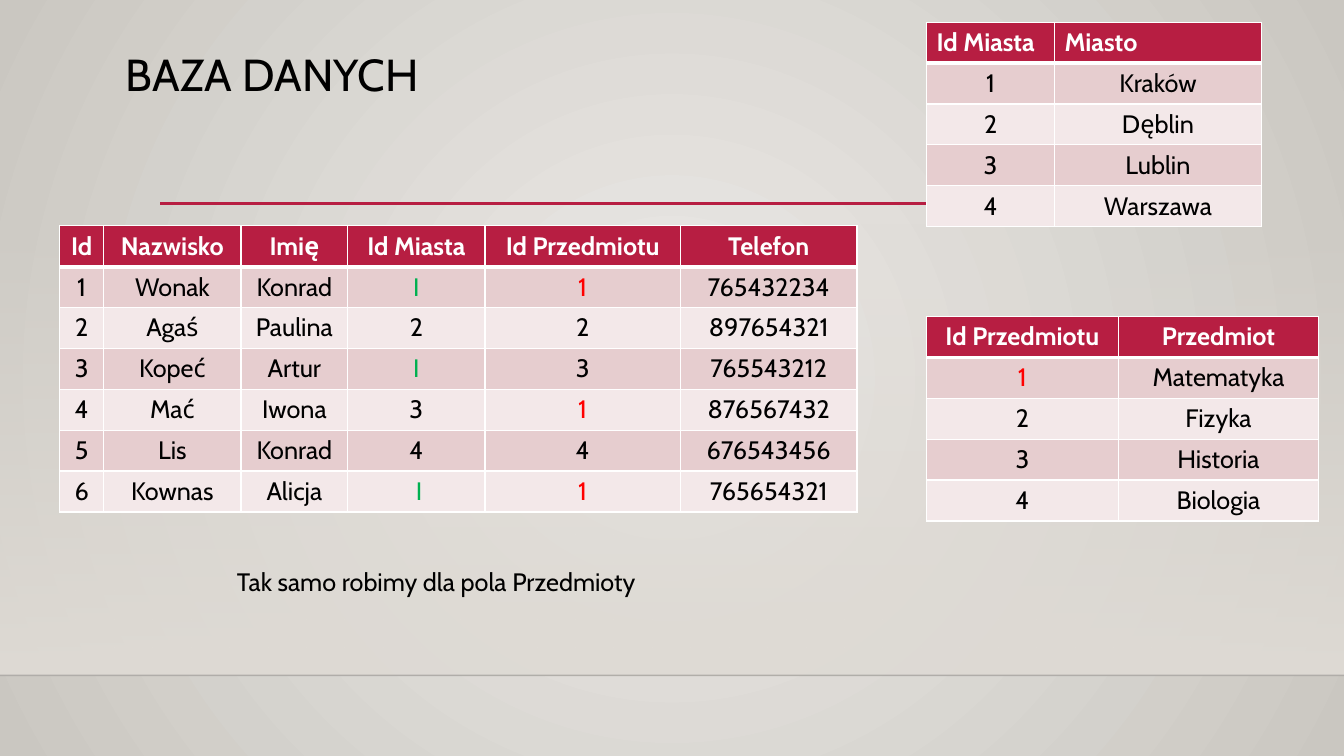
from dataclasses import dataclass

from lxml.etree import SubElement
from pptx import Presentation
from pptx.dml.color import RGBColor
from pptx.enum.shapes import MSO_CONNECTOR, MSO_SHAPE
from pptx.enum.text import MSO_ANCHOR, MSO_AUTO_SIZE, PP_ALIGN
from pptx.oxml.ns import qn
from pptx.util import Inches, Pt

BLACK = RGBColor(0x00, 0x00, 0x00)
SHELF = RGBColor(0x00, 0x00, 0x01)
WHITE = RGBColor(0xFF, 0xFF, 0xFF)
CRIMSON = RGBColor(0xB7, 0x1E, 0x42)
ROSE = RGBColor(0xE6, 0xCD, 0xCF)
PALE_ROSE = RGBColor(0xF3, 0xE8, 0xE9)
GREEN = RGBColor(0x00, 0xB0, 0x50)
RED = RGBColor(0xFF, 0x00, 0x00)
SAND = RGBColor(0xDF, 0xDB, 0xD5)
GLOW = RGBColor(0xEC, 0xEA, 0xE7)
EDGE = RGBColor(0xCA, 0xC7, 0xC1)

BODY = {"name": "Cabin", "size": Pt(18), "bold": False}
HEADER = BODY | {"bold": True}
TITLE = BODY | {"size": Pt(32)}


@dataclass
class DataTable:
    left: float
    top: float
    height: float
    widths: list[float]
    rows: list[list[str]]
    header_align: PP_ALIGN = PP_ALIGN.CENTER


@dataclass
class Rule:
    start: float
    end: float
    top: float
    color: RGBColor
    width: float
    opacity: int = 100


@dataclass
class Label:
    text: str
    left: float
    top: float
    width: float
    height: float
    style: dict
    spacing: float
    fit: MSO_AUTO_SIZE


TABLES = [
    DataTable(0.59, 2.24, 2.84, [0.44, 1.36, 1.06, 1.36, 1.94, 1.75], [
        ["Id", "Nazwisko", "Imię", "Id Miasta", "Id Przedmiotu", "Telefon"],
        ["1", "Wonak", "Konrad", "I", "1", "765432234"],
        ["2", "Agaś", "Paulina", "2", "2", "897654321"],
        ["3", "Kopeć", "Artur", "I", "3", "765543212"],
        ["4", "Mać", "Iwona", "3", "1", "876567432"],
        ["5", "Lis", "Konrad", "4", "4", "676543456"],
        ["6", "Kownas", "Alicja", " I", "1", "765654321"],
    ]),
    DataTable(9.19, 3.14, 2.02, [1.9, 1.99], [
        ["Id Przedmiotu", "Przedmiot"],
        ["1", "Matematyka"],
        ["2", "Fizyka"],
        ["3", "Historia"],
        ["4", "Biologia"],
    ]),
    DataTable(9.19, 0.22, 2.02, [1.27, 2.05], [
        ["Id Miasta", "Miasto"],
        ["1", "Kraków"],
        ["2", "Dęblin"],
        ["3", "Lublin"],
        ["4", "Warszawa"],
    ], PP_ALIGN.LEFT),
]
RULES = [
    Rule(0, 13.33, 6.7, SHELF, 1, 20),
    Rule(1.59, 12.1, 2.02, CRIMSON, 2.5),
]
LABELS = [
    Label("Tak samo robimy dla pola Przedmioty", 2.25, 5.57, 8.89, 0.4,
          BODY, 1.0, MSO_AUTO_SIZE.SHAPE_TO_FIT_TEXT),
    Label("BAZA DANYCH", 1.15, 0.47, 10.5, 1.15, TITLE, 0.9, MSO_AUTO_SIZE.NONE),
]


def write(para, text: str, style: dict, color: RGBColor) -> None:
    span = para.add_run()
    span.text = text
    for name, value in style.items():
        setattr(span.font, name, value)
    span.font.color.rgb = color


def set_opacity(element, percent: int) -> None:
    color = element.find(".//" + qn("a:srgbClr"))
    SubElement(color, qn("a:alpha"), val=str(percent * 1000))


def add_border(cell, side: str, width: float) -> None:
    properties = cell._tc.get_or_add_tcPr()
    line = SubElement(properties, qn("a:ln" + side), w=str(Pt(width)))
    fill = SubElement(line, qn("a:solidFill"))
    SubElement(fill, qn("a:srgbClr"), val=str(WHITE))


def draw_background(page) -> None:
    fill = page.background.fill
    fill.gradient()
    for stop, color in zip(fill.gradient_stops, (GLOW, EDGE)):
        stop.color.rgb = color
    gradient = page.element.find(".//" + qn("a:gradFill"))
    gradient.remove(gradient.find(qn("a:lin")))
    circle = SubElement(gradient, qn("a:path"), path="circle")
    SubElement(circle, qn("a:fillToRect"), l="50000", t="50000", r="50000", b="50000")


def draw_panel(page) -> None:
    panel = page.shapes.add_shape(
        MSO_SHAPE.RECTANGLE, 0, Inches(2.21), Inches(13.33), Inches(4.49))
    panel.shadow.inherit = False
    panel.line.fill.background()
    panel.fill.gradient()
    panel.fill.gradient_angle = 270
    for stop in panel.fill.gradient_stops:
        stop.color.rgb = SAND
    set_opacity(panel._element.find(".//" + qn("a:gs")), 0)


def draw_rule(page, rule: Rule) -> None:
    line = page.shapes.add_connector(
        MSO_CONNECTOR.STRAIGHT, Inches(rule.start), Inches(rule.top),
        Inches(rule.end), Inches(rule.top))
    line.line.color.rgb = rule.color
    line.line.width = Pt(rule.width)
    if rule.opacity < 100:
        set_opacity(line._element, rule.opacity)
    SubElement(line._element.spPr, qn("a:effectLst"))


def draw_label(page, label: Label) -> None:
    box = page.shapes.add_textbox(
        Inches(label.left), Inches(label.top), Inches(label.width), Inches(label.height))
    frame = box.text_frame
    frame.word_wrap = True
    frame.auto_size = label.fit
    frame.vertical_anchor = MSO_ANCHOR.TOP
    para = frame.paragraphs[0]
    para.line_spacing = label.spacing
    write(para, label.text, label.style, BLACK)


def value_color(column: str, text: str) -> RGBColor:
    """Highlight the keys that are repeated between tables."""
    if text.strip() == "I":
        return GREEN
    return RED if (column, text) == ("Id Przedmiotu", "1") else BLACK


def draw_table(page, data: DataTable) -> None:
    header = data.rows[0]
    table = page.shapes.add_table(
        len(data.rows), len(header), Inches(data.left), Inches(data.top),
        Inches(sum(data.widths)), Inches(data.height)).table
    for column, width in zip(table.columns, data.widths):
        column.width = Inches(width)
    for index, values in enumerate(data.rows):
        is_header = index == 0
        # The header's thick lower edge also bounds the first data row
        borders = {"L": 1, "R": 1, "T": 1, "B": 3} if is_header else {"L": 1, "R": 1, "B": 1}
        background = CRIMSON if is_header else (PALE_ROSE, ROSE)[index % 2]
        for position, text in enumerate(values):
            cell = table.cell(index, position)
            for side, width in borders.items():
                add_border(cell, side, width)
            cell.fill.solid()
            cell.fill.fore_color.rgb = background
            para = cell.text_frame.paragraphs[0]
            para.alignment = data.header_align if is_header else PP_ALIGN.CENTER
            color = WHITE if is_header else value_color(header[position], text)
            write(para, text, HEADER if is_header else BODY, color)


def main() -> None:
    deck = Presentation()
    deck.slide_width, deck.slide_height = Inches(13.33), Inches(7.5)
    page = deck.slides.add_slide(deck.slide_layouts[6])
    # Backdrop
    draw_background(page)
    draw_panel(page)
    for rule in RULES:
        draw_rule(page, rule)
    # Content
    for data in TABLES:
        draw_table(page, data)
    for label in LABELS:
        draw_label(page, label)
    deck.save("out.pptx")


if __name__ == "__main__":
    main()
